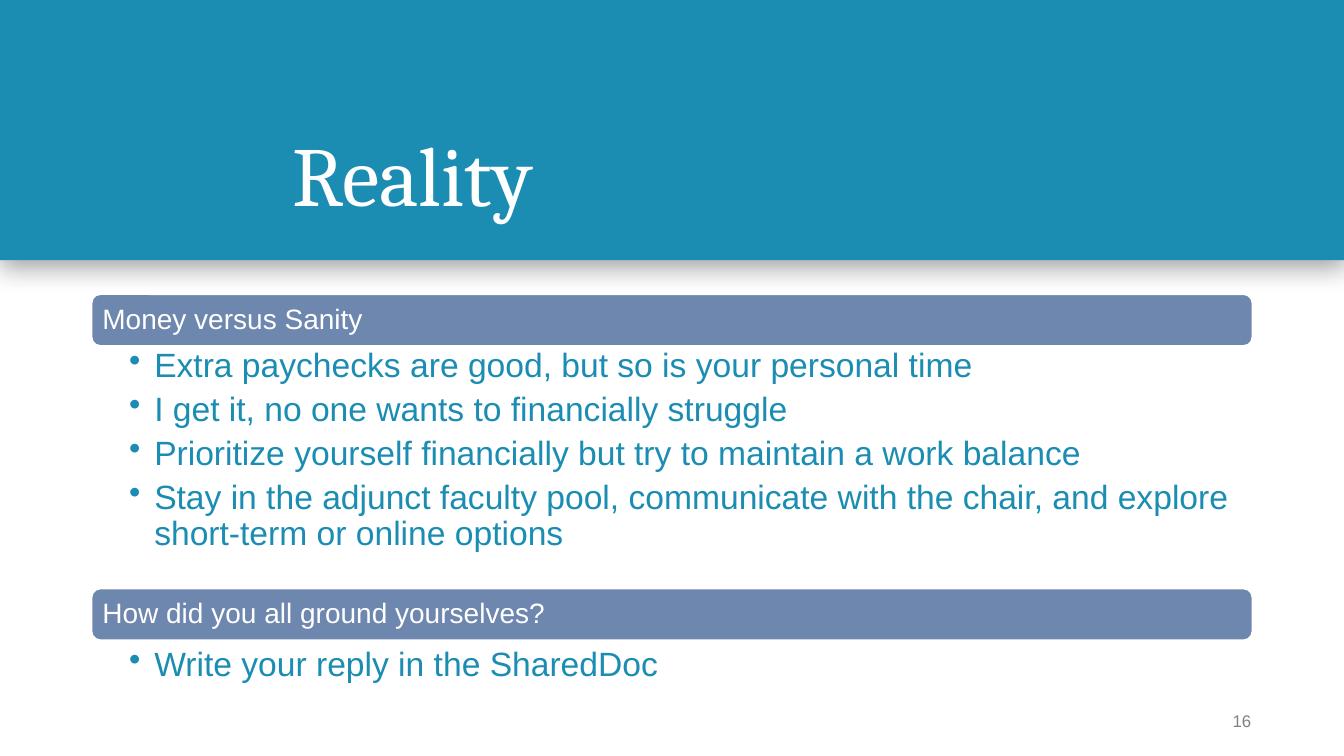
from lxml import etree
from pptx import Presentation
from pptx.dml.color import RGBColor
from pptx.enum.shapes import MSO_SHAPE as Shape
from pptx.enum.text import MSO_ANCHOR as Anchor, PP_ALIGN as Align
from pptx.oxml import parse_xml
from pptx.oxml.ns import nsdecls, qn
from pptx.util import Inches, Pt


def color(hex_string):
    return RGBColor.from_string(hex_string)


def write(frame, *lines, size, ink, font="Arial", anchor=Anchor.TOP,
          align=Align.LEFT, insets=(0.1, 0.05, 0.1, 0.05), spacing=0.9,
          after=0, bullet=None):
    """Fill a text frame, one paragraph per line; insets run left, top, right, bottom."""
    frame.word_wrap = True
    frame.vertical_anchor = anchor
    (frame.margin_left, frame.margin_top,
     frame.margin_right, frame.margin_bottom) = map(Inches, insets)
    for index, line in enumerate(lines):
        paragraph = frame.add_paragraph() if index else frame.paragraphs[0]
        paragraph.alignment = align
        paragraph.line_spacing = spacing
        paragraph.space_after = Pt(after)
        if bullet:
            paragraph.level = 1
            properties = paragraph._p.get_or_add_pPr()
            properties.set("marL", str(Inches(0.25)))
            properties.set("indent", str(Inches(-0.25)))
            etree.SubElement(properties, qn("a:buChar")).set("char", bullet)
        run = paragraph.add_run()
        run.text = line
        run.font.name = font
        run.font.size = Pt(size)
        run.font.color.rgb = color(ink)


class RealitySlide:
    TEAL, SLATE, WHITE, GRAY = "1B8DB2", "6E87AE", "FFFFFF", "808080"
    LEFT, WIDTH, BAR_HEIGHT = 0.91, 11.51, 0.51

    def __init__(self, deck):
        self.slide = deck.slides.add_slide(deck.slide_layouts[6])

    def block(self, kind, box, fill):
        shape = self.slide.shapes.add_shape(kind, *map(Inches, box))
        shape.shadow.inherit = False
        shape.fill.solid()
        shape.fill.fore_color.rgb = color(fill)
        return shape

    def text(self, box, *lines, **style):
        frame = self.slide.shapes.add_textbox(*map(Inches, box)).text_frame
        write(frame, *lines, **style)

    def banner(self, title):
        band = self.block(Shape.RECTANGLE, (0, 0, 13.33, 2.58), self.TEAL)
        band.line.fill.background()
        effects = band._element.spPr.find(qn("a:effectLst"))
        effects.append(parse_xml(
            f'<a:outerShdw {nsdecls("a")} blurRad="{Pt(18)}" dist="{Pt(5)}" '
            'dir="5400000" algn="t" rotWithShape="0"><a:srgbClr val="000000">'
            '<a:alpha val="35000"/></a:srgbClr></a:outerShdw>'))
        self.text((2.8, 0.44, 9.62, 1.84), title, size=60, ink=self.WHITE,
                  font="Cambria", anchor=Anchor.BOTTOM)

    def heading(self, top, words):
        bar = self.block(Shape.ROUNDED_RECTANGLE,
                         (self.LEFT, top, self.WIDTH, self.BAR_HEIGHT), self.SLATE)
        bar.line.color.rgb = color(self.WHITE)
        bar.line.width = Pt(1)
        write(bar.text_frame, words, size=20, ink=self.WHITE, anchor=Anchor.MIDDLE,
              insets=(0.08, 0.08, 0.08, 0.08))

    def bullets(self, top, height, *points):
        self.text((self.LEFT, top, self.WIDTH, height), *points, size=24,
                  ink=self.TEAL, insets=(0.37, 0.03, 0.19, 0.03), after=5.5, bullet="•")

    def page_number(self, number):
        self.text((11.41, 6.95, 1, 0.4), number, size=12, ink=self.GRAY, spacing=1.0,
                  anchor=Anchor.MIDDLE, align=Align.RIGHT, insets=(0.1, 0.05, 0, 0.05))


def main():
    deck = Presentation()
    deck.slide_width, deck.slide_height = Inches(13.33), Inches(7.5)
    reality = RealitySlide(deck)
    reality.banner("Reality")
    reality.heading(2.92, "Money versus Sanity")
    reality.bullets(
        3.43, 2.44,
        "Extra paychecks are good, but so is your personal time",
        "I get it, no one wants to financially struggle",
        "Prioritize yourself financially but try to maintain a work balance",
        "Stay in the adjunct faculty pool, communicate with the chair, "
        "and explore short-term or online options")
    reality.heading(5.84, "How did you all ground yourselves?")
    reality.bullets(6.39, 0.42, "Write your reply in the SharedDoc")
    reality.page_number("16")
    deck.save("out.pptx")


if __name__ == "__main__":
    main()
